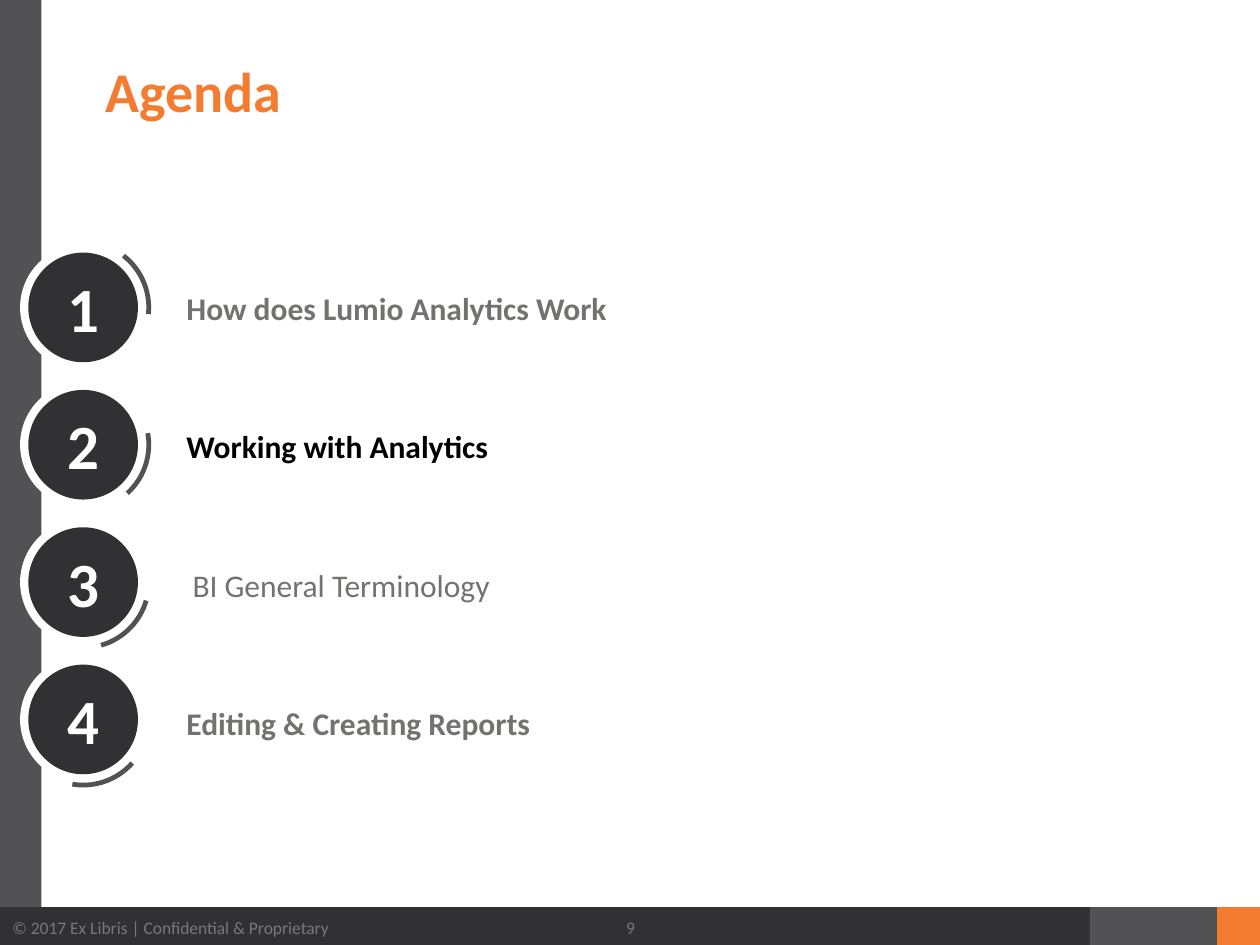
"""Build an agenda slide with four numbered badges, a side bar and a footer."""
from pptx import Presentation
from pptx import util as u
from pptx.dml.color import RGBColor
from pptx.enum import shapes, text

WIDTH, HEIGHT = 10, 7.5
FOOTER_TOP, FOOTER_HEIGHT = 0.96 * HEIGHT, 0.32
BADGE_X, BADGE_Y, BADGE_PITCH = 0.66, 2.44, 1.09
LABEL_X, LABEL_Y, LABEL_PITCH = 1.43, 2.44, 1.1
COLORS = {
    "dark": "313133",
    "grey": "525254",
    "orange": "F47C30",
    "white": "FFFFFF",
    "black": "000000",
    "muted": "767171",
    "footer": "787878",
}
AGENDA = [
    ("How does Lumio Analytics Work", "muted", True, 5.1),
    ("Working with Analytics", "black", True, 47),
    ("BI General Terminology", "muted", False, 73.5),
    ("Editing & Creating Reports", "muted", True, 98.8),
]


def rgb(name):
    return RGBColor.from_string(COLORS[name])


def write(shape, words, size, color, bold=False, align=text.PP_ALIGN.LEFT,
          anchor=text.MSO_ANCHOR.MIDDLE, inset=None):
    frame = shape.text_frame
    frame.word_wrap = True
    frame.auto_size = text.MSO_AUTO_SIZE.NONE
    frame.vertical_anchor = anchor
    if inset is not None:
        frame.margin_left = frame.margin_right = u.Inches(inset)
        frame.margin_top = frame.margin_bottom = u.Inches(inset)
    para = frame.paragraphs[0]
    para.alignment = align
    span = para.add_run()
    span.text = words
    span.font.name = "Calibri"
    span.font.size = u.Pt(size)
    span.font.bold = bold
    span.font.color.rgb = rgb(color)
    return para


def add_block(parent, kind, left, top, width, height, color):
    shape = parent.shapes.add_shape(kind, *map(u.Inches, (left, top, width, height)))
    shape.shadow.inherit = False
    shape.fill.solid()
    shape.fill.fore_color.rgb = rgb(color)
    shape.line.fill.background()
    return shape


def add_round(parent, kind, center_y, size, color):
    return add_block(parent, kind, BADGE_X - size / 2, center_y - size / 2, size, size, color)


def add_label(page, words, left, center_y, width, height, size, color, **style):
    box = page.shapes.add_textbox(
        *map(u.Inches, (left, center_y - height / 2, width, height)))
    write(box, words, size, color, **style)


def add_badge(page, number, center_y, angle):
    badge = page.shapes.add_group_shape()
    oval = shapes.MSO_SHAPE.OVAL
    add_round(badge, oval, center_y, 1, "white")
    arc = add_round(badge, shapes.MSO_SHAPE.BLOCK_ARC, center_y, 1.08, "grey")
    for index, value in enumerate((181.725, 0.424, 0.035)):
        arc.adjustments[index] = value
    arc.rotation = angle
    disc = add_round(badge, oval, center_y, 0.87, "dark")
    write(disc, str(number), 36, "white", bold=True, align=text.PP_ALIGN.CENTER)


def add_frame(page):
    bar = shapes.MSO_SHAPE.RECTANGLE
    left = 0
    strips = []
    for width, color in ((8.65, "dark"), (1.01, "grey"), (0.34, "orange")):
        strips.append(add_block(page, bar, left, FOOTER_TOP, width, FOOTER_HEIGHT, color))
        left += width
    write(strips[0], "© 2017 Ex Libris | Confidential & Proprietary", 10, "footer")
    add_block(page, bar, 0, 0, 0.33, FOOTER_TOP, "grey")
    add_label(page, "9", 4.42, FOOTER_TOP + FOOTER_HEIGHT / 2, 1.17, 0.39, 10,
              "footer", align=text.PP_ALIGN.CENTER)


def add_title(page, words):
    title = page.shapes.title
    title.left, title.top = u.Inches(0.74), u.Inches(0.46)
    title.width, title.height = u.Inches(0.85 * WIDTH), u.Inches(1.19)
    para = write(title, words, 32, "orange", bold=True, anchor=text.MSO_ANCHOR.TOP)
    para.line_spacing = 0.9


def main():
    deck = Presentation()
    deck.slide_width, deck.slide_height = u.Inches(WIDTH), u.Inches(HEIGHT)
    page = deck.slides.add_slide(deck.slide_layouts[5])
    add_frame(page)
    add_title(page, "Agenda")
    for row, (words, color, bold, angle) in enumerate(AGENDA):
        add_badge(page, row + 1, BADGE_Y + row * BADGE_PITCH, angle)
        width, height, inset = (6.07, 0.7, 0.05) if bold else (3.6, 0.4, 0.1)
        add_label(page, words, LABEL_X, LABEL_Y + row * LABEL_PITCH, width, height,
                  18, color, bold=bold, inset=inset)
    deck.save("out.pptx")


if __name__ == "__main__":
    main()
